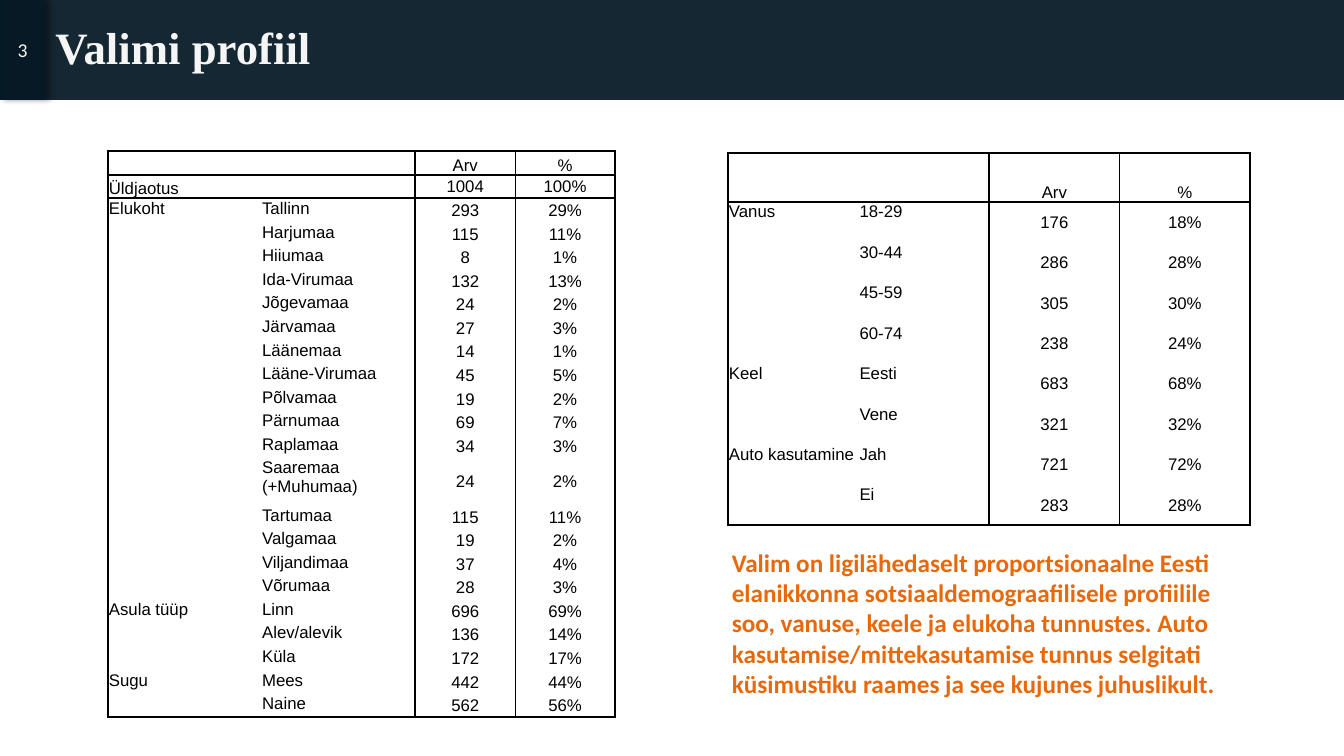
"""Build the "Valimi profiil" slide: two sample profile tables and a comment."""
import pptx
import pptx.dml.color
import pptx.enum.shapes
import pptx.enum.text
import pptx.oxml
import pptx.oxml.ns
import pptx.util

Inches = pptx.util.Inches
Pt = pptx.util.Pt
ALIGN = pptx.enum.text.PP_ALIGN
ANCHOR = pptx.enum.text.MSO_ANCHOR
NS = pptx.oxml.ns.nsdecls("a")
COLORS = {"bar": "061A26", "light": "F5F5F5", "black": "000000", "accent": "E7690B"}
HEAVY, THIN = 1.5, 0.5

PLACES = [
    ["", "", "Arv", "%"],
    ["Üldjaotus", "", "1004", "100%"],
    ["Elukoht", "Tallinn", "293", "29%"],
    ["", "Harjumaa", "115", "11%"],
    ["", "Hiiumaa", "8", "1%"],
    ["", "Ida-Virumaa", "132", "13%"],
    ["", "Jõgevamaa", "24", "2%"],
    ["", "Järvamaa", "27", "3%"],
    ["", "Läänemaa", "14", "1%"],
    ["", "Lääne-Virumaa", "45", "5%"],
    ["", "Põlvamaa", "19", "2%"],
    ["", "Pärnumaa", "69", "7%"],
    ["", "Raplamaa", "34", "3%"],
    ["", "Saaremaa (+Muhumaa)", "24", "2%"],
    ["", "Tartumaa", "115", "11%"],
    ["", "Valgamaa", "19", "2%"],
    ["", "Viljandimaa", "37", "4%"],
    ["", "Võrumaa", "28", "3%"],
    ["Asula tüüp", "Linn", "696", "69%"],
    ["", "Alev/alevik", "136", "14%"],
    ["", "Küla", "172", "17%"],
    ["Sugu", "Mees", "442", "44%"],
    ["", "Naine", "562", "56%"],
]
PEOPLE = [
    ["", "", "Arv", "%"],
    ["Vanus", "18-29", "176", "18%"],
    ["", "30-44", "286", "28%"],
    ["", "45-59", "305", "30%"],
    ["", "60-74", "238", "24%"],
    ["Keel", "Eesti", "683", "68%"],
    ["", "Vene", "321", "32%"],
    ["Auto kasutamine", "Jah", "721", "72%"],
    ["", "Ei", "283", "28%"],
]
place_heights = [5.62 / 24] * len(PLACES)
place_heights[13] *= 2
people_heights = [0.48] + [(3.69 - 0.48) / 8] * 8


def write(tf, text, font, size, color, bold=False, align=ALIGN.LEFT):
    """Put one paragraph into a text frame and return it."""
    tf.word_wrap = True
    p = tf.paragraphs[0]
    if text:
        p.add_run().text = text
    p.alignment = align
    p.font.name = font
    p.font.size = Pt(size)
    p.font.bold = bold
    p.font.color.rgb = pptx.dml.color.RGBColor.from_string(COLORS[color])
    return p


def set_border(cell, side, width):
    """Draw one edge of a cell, or clear it when the width is zero."""
    fill = f'<a:solidFill><a:srgbClr val="{COLORS["black"]}"/></a:solidFill>' if width else "<a:noFill/>"
    cell._tc.get_or_add_tcPr().append(
        pptx.oxml.parse_xml(f'<a:ln{side} {NS} w="{Pt(width)}">{fill}</a:ln{side}>'))


prs = pptx.Presentation()
prs.slide_width, prs.slide_height = Inches(13.33), Inches(7.5)
s = prs.slides.add_slide(prs.slide_layouts[6])

bars = []
for width, opacity in [(13.33, 94), (0.45, 93)]:
    sp = s.shapes.add_shape(pptx.enum.shapes.MSO_SHAPE.RECTANGLE, 0, 0, Inches(width), Inches(0.99))
    sp.shadow.inherit = False
    sp.line.fill.background()
    sp.fill.solid()
    sp.fill.fore_color.rgb = pptx.dml.color.RGBColor.from_string(COLORS["bar"])
    sp.fill._xPr.find(".//" + pptx.oxml.ns.qn("a:srgbClr")).append(
        pptx.oxml.parse_xml(f'<a:alpha {NS} val="{opacity * 1000}"/>'))
    bars.append(sp)

number = bars[1]
number._element.spPr.find(pptx.oxml.ns.qn("a:effectLst")).append(pptx.oxml.parse_xml(
    f'<a:outerShdw {NS} blurRad="{Pt(4)}" dist="{Pt(3)}" dir="0">'
    f'<a:srgbClr val="{COLORS["black"]}"><a:alpha val="40000"/></a:srgbClr></a:outerShdw>'))
tf = number.text_frame
tf.margin_left = tf.margin_right = 0
tf.vertical_anchor = ANCHOR.MIDDLE
write(tf, "3", "Calibri", 14, "light", align=ALIGN.CENTER)

title = s.shapes.add_textbox(Inches(0.45), 0, Inches(12.88), Inches(0.99))
title.text_frame.vertical_anchor = ANCHOR.MIDDLE
p = write(title.text_frame, "Valimi profiil", "Times New Roman", 32, "light", bold=True)
p.line_spacing = 0.9

for rows, left, top, widths, heights, headers in [
    (PLACES, 1.07, 1.5, [1.52, 1.53, 0.99, 0.99], place_heights, 2),
    (PEOPLE, 7.22, 1.52, [1.295] * 4, people_heights, 1),
]:
    table = s.shapes.add_table(len(rows), 4, Inches(left), Inches(top),
                               Inches(sum(widths)), Inches(sum(heights))).table
    table.first_row = table.horz_banding = False
    for column, width in zip(table.columns, widths):
        column.width = Inches(width)
    for row, height in zip(table.rows, heights):
        row.height = Inches(height)

    table.cell(0, 0).merge(table.cell(0, 1))
    starts = [r for r in range(headers, len(rows)) if rows[r][0]]
    for start, end in zip(starts, starts[1:] + [len(rows)]):
        table.cell(start, 0).merge(table.cell(end - 1, 0))

    rules = {*range(headers + 1), len(rows)}
    uprights = {0: HEAVY, 2: HEAVY, 3: THIN, 4: HEAVY}
    for r, row in enumerate(rows):
        for c, text in enumerate(row):
            cell = table.cell(r, c)
            cell.margin_left = cell.margin_right = cell.margin_top = Inches(0.01)
            cell.margin_bottom = 0
            if r == 0 or text == "Üldjaotus":
                cell.vertical_anchor = ANCHOR.BOTTOM
            else:
                cell.vertical_anchor = ANCHOR.MIDDLE if c > 1 else ANCHOR.TOP
            write(cell.text_frame, text, "Arial", 12, "black",
                  align=ALIGN.CENTER if c > 1 else ALIGN.LEFT)
            set_border(cell, "L", uprights.get(c, 0))
            set_border(cell, "R", uprights.get(c + cell.span_width, 0))
            set_border(cell, "T", HEAVY if r in rules else 0)
            set_border(cell, "B", HEAVY if r + cell.span_height in rules else 0)
            cell.fill.background()

comment = s.shapes.add_textbox(Inches(7.16), Inches(5.38), Inches(5.3), Inches(1.62))
write(comment.text_frame,
      "Valim on ligilähedaselt proportsionaalne Eesti elanikkonna sotsiaaldemograafilisele "
      "profiilile soo, vanuse, keele ja elukoha tunnustes. Auto kasutamise/mittekasutamise "
      "tunnus selgitati küsimustiku raames ja see kujunes juhuslikult.",
      "Calibri", 18, "accent", bold=True)

prs.save("out.pptx")
